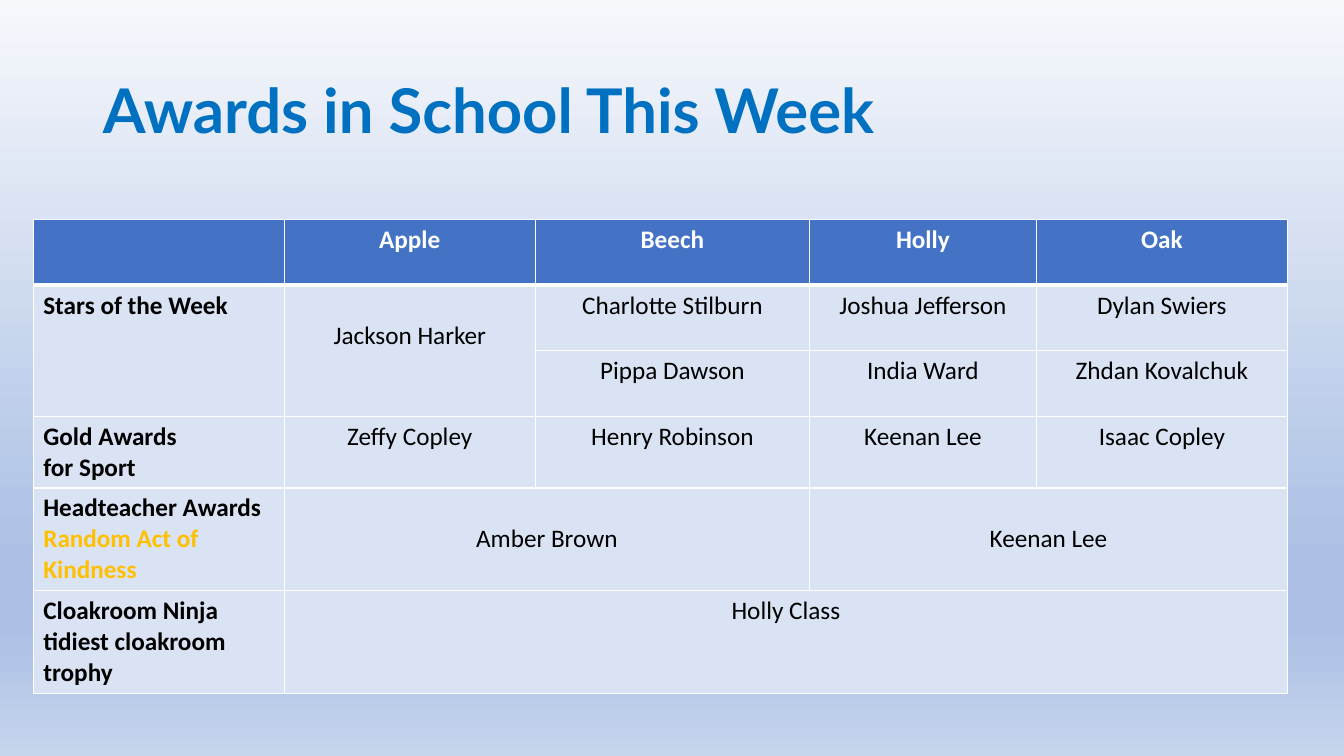
from pptx import Presentation
from pptx.dml.color import RGBColor
from pptx.enum.text import MSO_ANCHOR, PP_ALIGN
from pptx.oxml.ns import qn
from pptx.util import Inches, Pt
from lxml.etree import SubElement, Element

COLORS = {
    "title": "0070C0", "head": "4472C4", "body": "DAE3F3",
    "white": "FFFFFF", "black": "000000", "gold": "FFC000",
}
STOPS = [(0, "F6F8FC"), (74, "ABC0E4"), (83, "ABC0E4"), (100, "C7D5ED")]
WIDTHS = [2.49, 2.49, 2.72, 2.25, 2.49]
HEIGHTS = [0.65, 0.65, 0.65, 0.71, 1.02, 1.02]
ROWS = [
    ["", "Apple", "Beech", "Holly", "Oak"],
    ["Stars of the Week", "Jackson Harker", "Charlotte Stilburn",
     "Joshua Jefferson", "Dylan Swiers"],
    ["", "", "Pippa Dawson", "India Ward", "Zhdan Kovalchuk"],
    ["Gold Awards\nfor Sport", "Zeffy Copley", "Henry Robinson",
     "Keenan Lee", "Isaac Copley"],
    ["Headteacher Awards ", "Amber Brown", "", "Keenan Lee", ""],
    ["Cloakroom Ninja tidiest cloakroom trophy", "Holly Class", "", "", ""],
]
# First and last cell of each merged block
MERGES = [((1, 0), (2, 0)), ((1, 1), (2, 1)), ((4, 1), (4, 2)),
          ((4, 3), (4, 4)), ((5, 1), (5, 4))]
LOWERED = [(1, 1), (4, 1), (4, 3)]  # names set one line down


def color(name):
    return RGBColor.from_string(COLORS[name])


def set_back(slide):
    fill = slide.background.fill
    fill.gradient()
    fill.gradient_angle = 270
    stops = next(slide.element.iter(qn("a:gsLst")))
    for old in list(stops):
        stops.remove(old)
    for place, shade in STOPS:
        stop = SubElement(stops, qn("a:gs"), pos=str(place * 1000))
        SubElement(stop, qn("a:srgbClr"), val=shade)


def set_title(slide, text):
    title = slide.shapes.title
    title.left, title.top = Inches(0.92), Inches(0.4)
    title.width, title.height = Inches(11.5), Inches(1.45)
    frame = title.text_frame
    frame.text = text
    frame.vertical_anchor = MSO_ANCHOR.MIDDLE
    para = frame.paragraphs[0]
    para.alignment = PP_ALIGN.LEFT
    para.line_spacing = 0.9
    set_font(para.font, "title", True, 44, "Lato")


def set_font(font, shade, bold, size=18, name="Calibri"):
    font.name, font.size, font.bold = name, Pt(size), bold
    font.color.rgb = color(shade)


def set_lines(cell, row):
    widths = {"L": 1, "R": 1, "T": 3 if row == 1 else 1, "B": 3 if row == 0 else 1}
    props = cell._tc.get_or_add_tcPr()
    for spot, (side, width) in enumerate(widths.items()):
        line = Element(qn("a:ln" + side), w=str(Pt(width)))
        fill = SubElement(line, qn("a:solidFill"))
        SubElement(fill, qn("a:srgbClr"), val=COLORS["white"])
        props.insert(spot, line)


def set_cell(cell, text, row, col):
    cell.fill.solid()
    cell.fill.fore_color.rgb = color("body" if row else "head")
    set_lines(cell, row)
    if (row, col) in LOWERED:
        cell.margin_top = Inches(0.35)
    cell.text = text
    for para in cell.text_frame.paragraphs:
        para.alignment = PP_ALIGN.CENTER if col else PP_ALIGN.LEFT
        set_font(para.font, "black" if row else "white", row == 0 or col == 0)


def add_awards(slide):
    frame = slide.shapes.add_table(
        len(ROWS), len(WIDTHS), Inches(0.33), Inches(2.18),
        Inches(sum(WIDTHS)), Inches(sum(HEIGHTS)))
    table = frame.table
    for col, width in zip(table.columns, WIDTHS):
        col.width = Inches(width)
    for row, height in zip(table.rows, HEIGHTS):
        row.height = Inches(height)
    for r, texts in enumerate(ROWS):
        for c, text in enumerate(texts):
            set_cell(table.cell(r, c), text, r, c)
    for first, last in MERGES:
        table.cell(*first).merge(table.cell(*last))
    # Gold part of the headteacher label
    run = table.cell(4, 0).text_frame.paragraphs[0].add_run()
    run.text = "Random Act of Kindness"
    run.font.color.rgb = color("gold")


def main():
    deck = Presentation()
    deck.slide_width, deck.slide_height = Inches(13.33), Inches(7.5)
    slide = deck.slides.add_slide(deck.slide_layouts[5])
    set_back(slide)
    set_title(slide, "Awards in School This Week")
    add_awards(slide)
    deck.save("out.pptx")


if __name__ == "__main__":
    main()
